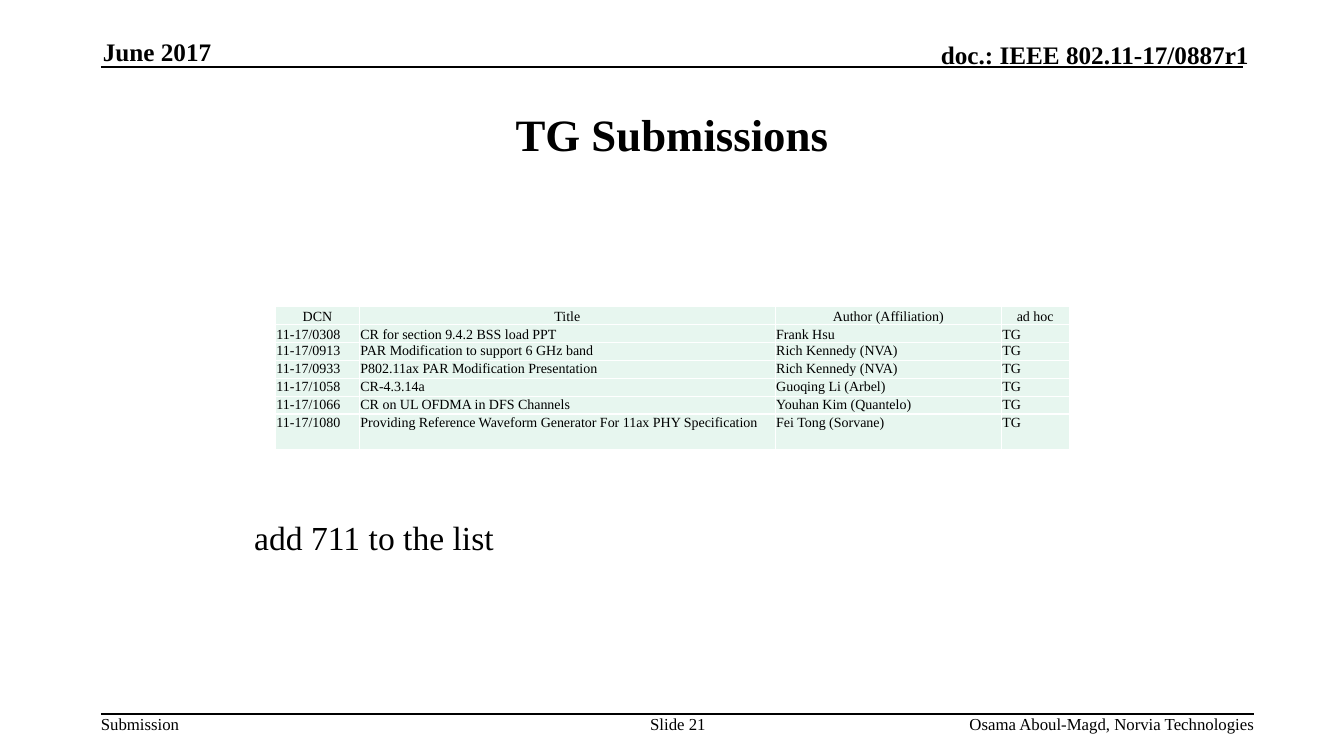
"""Builds the TG Submissions slide with its table of submitted documents."""
from lxml import etree
from pptx import Presentation
from pptx.dml.color import RGBColor
from pptx.enum.shapes import MSO_CONNECTOR
from pptx.enum.text import MSO_ANCHOR, MSO_AUTO_SIZE, PP_ALIGN
from pptx.oxml.ns import qn
from pptx.util import Pt

LEFT, CENTER, RIGHT = PP_ALIGN.LEFT, PP_ALIGN.CENTER, PP_ALIGN.RIGHT
TOP, MIDDLE, BOTTOM = MSO_ANCHOR.TOP, MSO_ANCHOR.MIDDLE, MSO_ANCHOR.BOTTOM
FIT_SHAPE = MSO_AUTO_SIZE.SHAPE_TO_FIT_TEXT
STRAIGHT = MSO_CONNECTOR.STRAIGHT
BLACK = RGBColor(0, 0, 0)
MINT = RGBColor(0xE7, 0xF6, 0xEF)
WHITE = RGBColor(0xFF, 0xFF, 0xFF)
FONT = "Times New Roman"


def style_paragraph(paragraph, text, size, align, bold=False):
    paragraph.text = text
    paragraph.alignment = align
    paragraph.font.name = FONT
    paragraph.font.size = Pt(size)
    paragraph.font.bold = bold
    paragraph.font.color.rgb = BLACK


prs = Presentation()
prs.slide_width, prs.slide_height = Pt(960), Pt(540)
slide = prs.slides.add_slide(prs.slide_layouts[6])

for rule_y, rule_end in [(48, 888), (510, 896)]:
    rule = slide.shapes.add_connector(STRAIGHT, Pt(72), Pt(rule_y), Pt(rule_end), Pt(rule_y))
    rule.line.color.rgb = BLACK
    rule.line.width = Pt(1)
    etree.SubElement(rule._element.spPr, qn("a:effectLst"))

texts = [
    ("Submission", (72, 510, 57, 14.5), 12, LEFT, TOP, False, (0, 0), False),
    ("doc.: IEEE 802.11-17/0887r1", (525, 28, 367, 21.5), 18, RIGHT, BOTTOM, True, (0, 0), True),
    ("TG Submissions", (72, 54, 816, 83.5), 32, CENTER, MIDDLE, True, (7.2, 3.6), True),
    ("June 2017", (73.5, 26, 196.5, 21.5), 18, LEFT, BOTTOM, True, (0, 0), True),
    ("Osama Aboul-Magd, Norvia Technologies", (562, 510, 334, 14.5), 12, RIGHT, TOP, False, (0, 0), True),
    ("Slide 21", (456.5, 510, 55.5, 29), 12, CENTER, TOP, False, (0, 0), True),
    ("add 711 to the list", (174.5, 366, 187, 36), 24, LEFT, TOP, False, (7.2, 3.6), False),
]
for text, bounds, size, align, anchor, bold, (inset_x, inset_y), wrap in texts:
    frame = slide.shapes.add_textbox(*map(Pt, bounds)).text_frame
    frame.margin_left = frame.margin_right = Pt(inset_x)
    frame.margin_top = frame.margin_bottom = Pt(inset_y)
    frame.word_wrap = wrap
    frame.vertical_anchor = anchor
    if not wrap:
        frame.auto_size = FIT_SHAPE
    style_paragraph(frame.paragraphs[0], text, size, align, bold)

submissions = [
    ("DCN", "Title", "Author (Affiliation)", "ad hoc"),
    ("11-17/0308", "CR for section 9.4.2 BSS load PPT", "Frank Hsu", "TG"),
    ("11-17/0913", "PAR Modification to support 6 GHz band", "Rich Kennedy (NVA)", "TG"),
    ("11-17/0933", "P802.11ax PAR Modification Presentation", "Rich Kennedy (NVA)", "TG"),
    ("11-17/1058", "CR-4.3.14a", "Guoqing Li (Arbel)", "TG"),
    ("11-17/1066", "CR on UL OFDMA in DFS Channels", "Youhan Kim (Quantelo)", "TG"),
    ("11-17/1080", "Providing Reference Waveform Generator For 11ax PHY Specification",
     "Fei Tong (Sorvane)", "TG"),
]
column_widths = [60, 297, 161.5, 48.5]
row_heights = [12.75] * 6 + [25.5]
table = slide.shapes.add_table(len(submissions), len(column_widths), Pt(196.75), Pt(219),
                               Pt(sum(column_widths)), Pt(sum(row_heights))).table
for column, width in zip(table.columns, column_widths):
    column.width = Pt(width)
for row, height in zip(table.rows, row_heights):
    row.height = Pt(height)

for row_index, submission in enumerate(submissions):
    for column_index, entry in enumerate(submission):
        cell = table.cell(row_index, column_index)
        cell.margin_left = cell.margin_right = cell.margin_top = Pt(0.75)
        cell.margin_bottom = Pt(0)
        cell.vertical_anchor = BOTTOM if row_index < 2 else TOP
        style_paragraph(cell.text_frame.paragraphs[0], entry, 10, LEFT if row_index else CENTER)
        cell_properties = cell._tc.get_or_add_tcPr()
        for side in ("a:lnL", "a:lnR", "a:lnT", "a:lnB"):
            border = etree.SubElement(cell_properties, qn(side), w=str(Pt(1)))
            border_fill = etree.SubElement(border, qn("a:solidFill"))
            etree.SubElement(border_fill, qn("a:srgbClr"), val=str(WHITE))
        cell.fill.solid()
        cell.fill.fore_color.rgb = MINT

prs.save("out.pptx")
